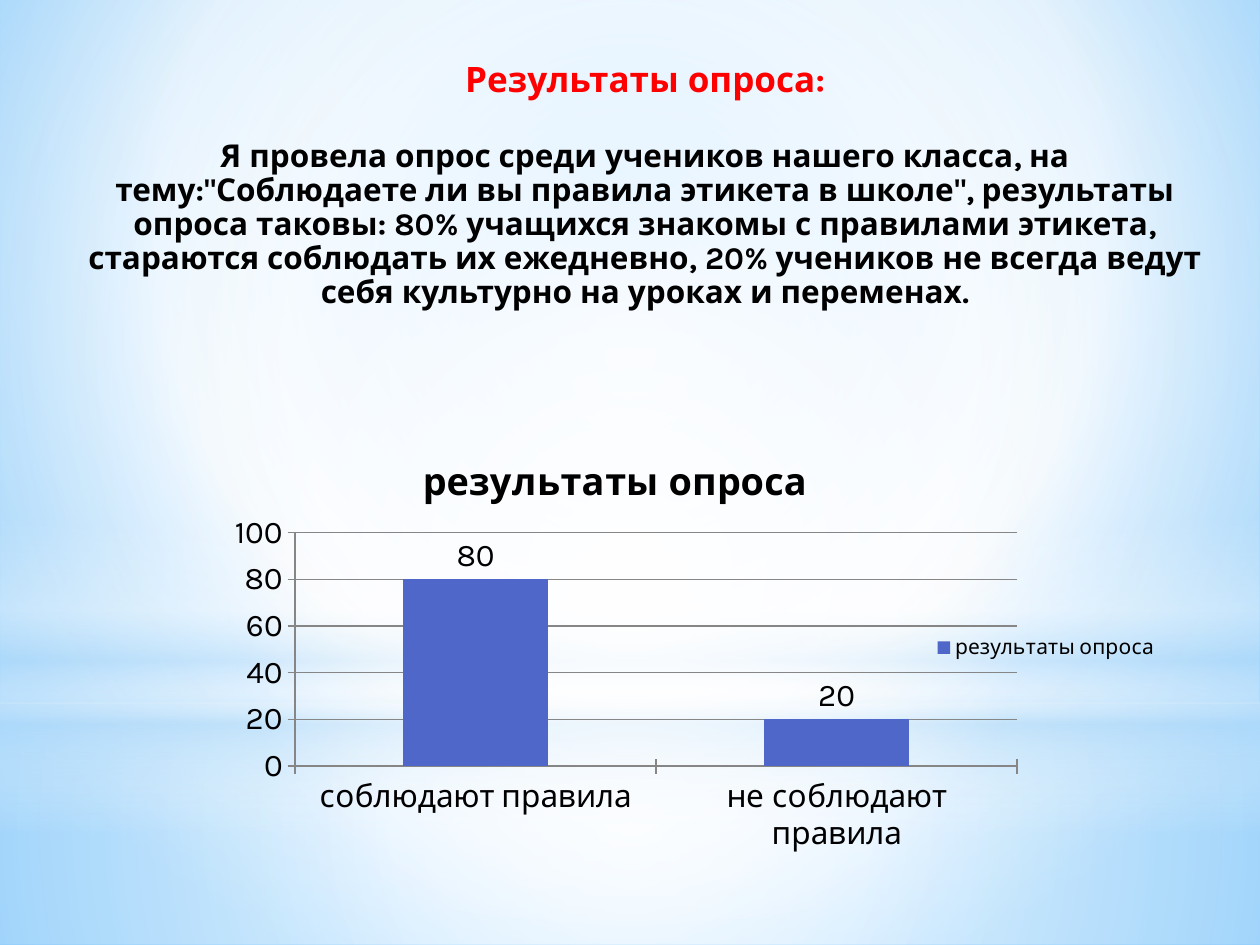
from pptx import Presentation
from pptx.chart.data import CategoryChartData
from pptx.dml.color import RGBColor as RGB
from pptx.enum.chart import (XL_CHART_TYPE as Kind, XL_LABEL_POSITION as Label,
                             XL_LEGEND_POSITION as Side, XL_TICK_MARK as Tick)
from pptx.enum.shapes import MSO_SHAPE as Form
from pptx.enum.text import MSO_ANCHOR as Anchor, MSO_AUTO_SIZE as Fit, PP_ALIGN as Align
from pptx.oxml import parse_xml
from pptx.oxml.ns import nsdecls, qn
from pptx.util import Inches, Pt

HEAD = "Результаты опроса:"
BODY = ('Я провела опрос среди учеников нашего класса, на тему:"Соблюдаете ли вы '
        'правила этикета в школе", результаты опроса таковы: 80% учащихся знакомы '
        'с правилами этикета, стараются соблюдать их ежедневно, 20% учеников не '
        'всегда ведут себя культурно на уроках и переменах.')
SERIES = "результаты опроса"
VOTES = {"соблюдают правила": 80, "не соблюдают правила": 20}

THEME = {
    "font": "Karla", "head": RGB(255, 0, 0), "text": RGB(0, 0, 0),
    "bar": RGB.from_string("4E67C8"), "line": RGB.from_string("868686"),
    "head_size": Pt(20), "size": Pt(18), "title_size": Pt(21.6), "key_size": Pt(12),
    "white": "FFFFFF", "sky": "B4DCFA", "glow": "9ED5FF", "deep": "5BB9FF",
}
MID = (50, 50, 50, 50)

# Stops are (position %, colour, opacity %); focus is left, top, right, bottom %,
# and None stands for a vertical linear blend.
BACK = ([(0, "glow", 100), (60, "white", 100), (100, "deep", 100)], (20, 10, 20, 60))
PANELS = [
    (Form.RECTANGLE, 5.58, 1.92,
     [(0, "white", 91), (37, "white", 76), (100, "sky", 79)], MID),
    (Form.RECTANGLE, 0, 5.58,
     [(0, "white", 89), (48, "white", 62), (100, "sky", 79)], MID),
    (Form.RECTANGLE, 4.12, 2.5,
     [(0, "white", 0), (29, "white", 30), (45, "sky", 40), (55, "white", 26),
      (65, "sky", 60), (100, "white", 0)], None),
    (Form.OVAL, 1.75, 5.58, [(0, "white", 100), (56, "white", 0)], MID),
]
PLOT = {"x": 0.212, "y": 0.232, "w": 0.649, "h": 0.545}


def blend(fill, root, stops, focus):
    """Give fill, found inside root, a gradient with transparent stops."""
    fill.gradient()
    old = next(root.iter(qn("a:gradFill")))
    marks = "".join(
        f'<a:gs pos="{pos * 1000}"><a:srgbClr val="{THEME[name]}">'
        f'<a:alpha val="{alpha * 1000}"/></a:srgbClr></a:gs>'
        for pos, name, alpha in stops)
    if focus:
        sides = " ".join(f'{k}="{v * 1000}"' for k, v in zip("ltrb", focus))
        way = f'<a:path path="circle"><a:fillToRect {sides}/></a:path>'
    else:
        way = '<a:lin ang="5400000" scaled="0"/>'
    new = parse_xml(f'<a:gradFill {nsdecls("a")} rotWithShape="1">'
                    f'<a:gsLst>{marks}</a:gsLst>{way}</a:gradFill>')
    old.getparent().replace(old, new)


def style(font, size, color=THEME["text"], bold=False):
    font.name, font.size, font.bold = THEME["font"], size, bold
    font.color.rgb = color


def add_back(slide):
    blend(slide.background.fill, slide.element, *BACK)
    tree = slide.shapes.element
    for i, (form, top, height, stops, focus) in enumerate(PANELS):
        panel = slide.shapes.add_shape(
            form, 0, Inches(top), Inches(10), Inches(height))
        panel.shadow.inherit = False
        panel.line.fill.background()
        blend(panel.fill, panel.element, stops, focus)
        tree.insert(2 + i, panel.element)  # behind the title


def add_title(slide):
    title = slide.shapes.title
    title.left, title.top = Inches(0.59), Inches(0.44)
    title.width, title.height = Inches(9.06), Inches(6.38)
    frame = title.text_frame
    frame.word_wrap, frame.auto_size = True, Fit.NONE
    frame.vertical_anchor = Anchor.TOP
    frame.text = f"{HEAD}\n{BODY}"
    looks = [(THEME["head_size"], THEME["head"], 0), (THEME["size"], THEME["text"], 23)]
    for para, (size, color, gap) in zip(frame.paragraphs, looks):
        para.alignment, para.line_spacing = Align.CENTER, 0.9
        para.space_before = Pt(gap)
        style(para.font, size, color, True)


def add_votes(slide):
    data = CategoryChartData()
    data.categories = list(VOTES)
    data.add_series(SERIES, list(VOTES.values()))
    chart = slide.shapes.add_chart(
        Kind.COLUMN_CLUSTERED, Inches(0.47), Inches(3.44),
        Inches(8.83), Inches(3.4), data).chart
    style(chart.font, THEME["size"])

    chart.has_title = True
    chart.chart_title.include_in_layout = False
    frame = chart.chart_title.text_frame
    frame.text = SERIES
    style(frame.paragraphs[0].font, THEME["title_size"], bold=True)

    chart.has_legend = True
    chart.legend.position = Side.RIGHT
    chart.legend.include_in_layout = False
    style(chart.legend.font, THEME["key_size"])

    for axis in (chart.category_axis, chart.value_axis):
        axis.major_tick_mark = Tick.CROSS
        axis.format.line.color.rgb = THEME["line"]
    scale = chart.value_axis
    scale.minimum_scale, scale.maximum_scale, scale.major_unit = 0, 100, 20
    scale.major_gridlines.format.line.color.rgb = THEME["line"]

    plot = chart.plots[0]
    plot.gap_width, plot.vary_by_categories = 150, False
    plot.series[0].format.fill.solid()
    plot.series[0].format.fill.fore_color.rgb = THEME["bar"]
    plot.has_data_labels = True
    plot.data_labels.show_value = True
    plot.data_labels.position = Label.OUTSIDE_END
    style(plot.data_labels.font, THEME["size"])

    area = next(chart.element.iter(qn("c:plotArea")))
    for old in area.findall(qn("c:layout")):
        area.remove(old)
    modes = "".join(f'<c:{k}Mode val="edge"/>' for k in "xy")
    sizes = "".join(f'<c:{k} val="{v}"/>' for k, v in PLOT.items())
    area.insert(0, parse_xml(
        f'<c:layout {nsdecls("c")}><c:manualLayout><c:layoutTarget val="inner"/>'
        f'{modes}{sizes}</c:manualLayout></c:layout>'))


def main():
    deck = Presentation()
    deck.slide_width, deck.slide_height = Inches(10), Inches(7.5)
    slide = deck.slides.add_slide(deck.slide_layouts[5])
    add_back(slide)
    add_title(slide)
    add_votes(slide)
    deck.save("out.pptx")


if __name__ == "__main__":
    main()
